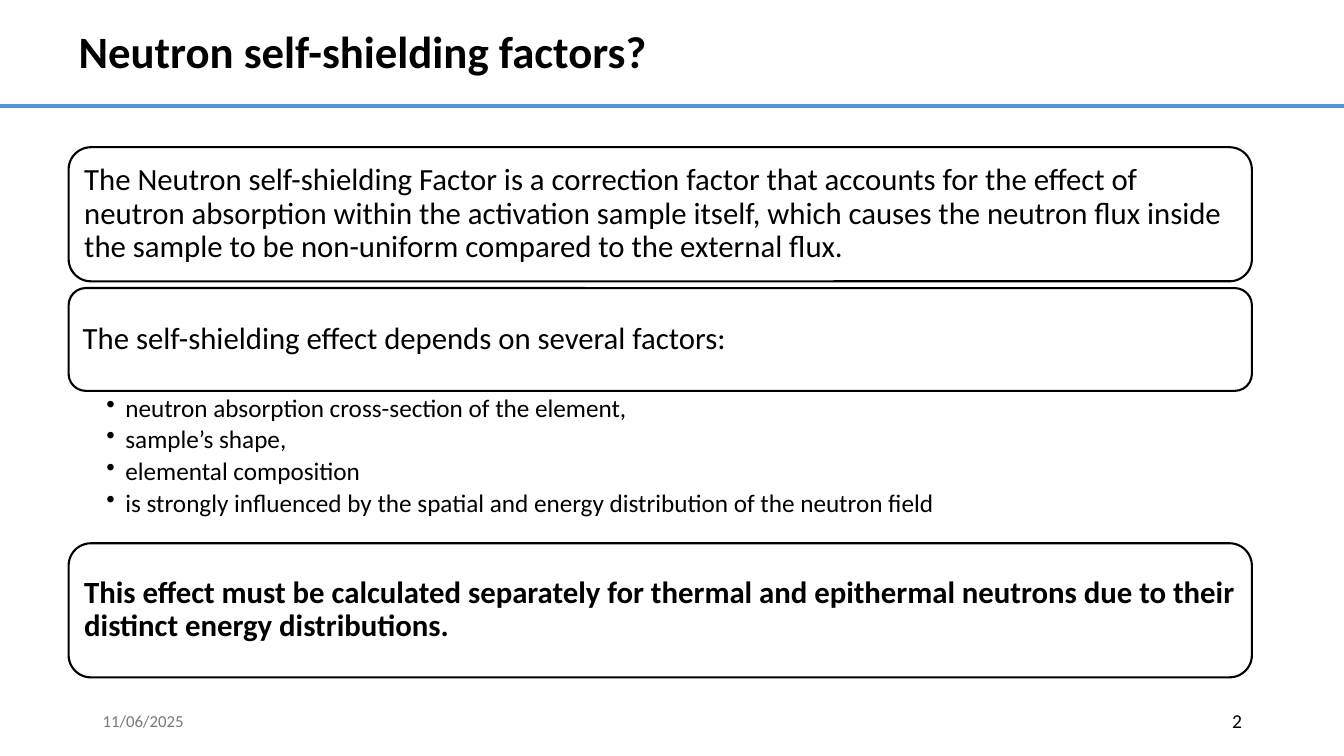
import dataclasses
import lxml.etree
import pptx
import pptx.dml.color
import pptx.enum.shapes
import pptx.enum.text
import pptx.oxml.ns
import pptx.util

Cm, Pt = pptx.util.Cm, pptx.util.Pt
Align, Anchor = pptx.enum.text.PP_ALIGN, pptx.enum.text.MSO_ANCHOR
qn = pptx.oxml.ns.qn


@dataclasses.dataclass(frozen=True)
class Theme:
    font: str = "Calibri"
    ink: str = "000000"
    paper: str = "FFFFFF"
    rule: str = "4E95D9"
    muted: str = "797979"
    title: int = 32
    body: int = 22
    item: int = 18
    page: int = 14
    date: int = 12


theme = Theme()


def rgb(code):
    return pptx.dml.color.RGBColor.from_string(code)


def write(shape, *lines, size, color=theme.ink, bold=False, align=Align.LEFT,
          anchor=Anchor.MIDDLE, inset=(0.25, 0.13, 0.25, 0.13),
          spacing=0.9, after=0, bullet=False):
    frame = shape.text_frame
    frame.word_wrap = True
    frame.vertical_anchor = anchor
    (frame.margin_left, frame.margin_top,
     frame.margin_right, frame.margin_bottom) = map(Cm, inset)
    for i, text in enumerate(lines):
        para = frame.add_paragraph() if i else frame.paragraphs[0]
        para.alignment = align
        para.line_spacing = spacing
        para.space_after = Pt(after)
        if bullet:
            props = para._p.get_or_add_pPr()
            props.set("marL", str(Cm(0.48)))
            props.set("indent", str(-Cm(0.48)))
            lxml.etree.SubElement(props, qn("a:buChar")).set("char", "•")
        run = para.add_run()
        run.text = text
        run.font.name = theme.font
        run.font.size = Pt(size)
        run.font.bold = bold
        run.font.color.rgb = rgb(color)


deck = pptx.Presentation()
deck.slide_width, deck.slide_height = Cm(33.87), Cm(19.05)
slide = deck.slides.add_slide(deck.slide_layouts[6])
shapes = slide.shapes
left, width = Cm(1.73), Cm(29.82)

# Title and rule
rule = shapes.add_connector(pptx.enum.shapes.MSO_CONNECTOR.STRAIGHT,
                            0, Cm(2.67), deck.slide_width, Cm(2.67))
rule.line.color.rgb = rgb(theme.rule)
rule.line.width = Pt(2.25)
lxml.etree.SubElement(rule._element.spPr, qn("a:effectLst"))
title = shapes.add_textbox(left, Cm(0.2), width, Cm(2.31))
write(title, "Neutron self-shielding factors?", size=theme.title, bold=True)

# Statement cards
cards = [
    (3.71, 3.38, False,
     "The Neutron self-shielding Factor is a correction factor that accounts "
     "for the effect of neutron absorption within the activation sample "
     "itself, which causes the neutron flux inside the sample to be "
     "non-uniform compared to the external flux."),
    (7.26, 2.59, False,
     "The self-shielding effect depends on several factors:"),
    (13.69, 3.38, True,
     "This effect must be calculated separately for thermal and epithermal "
     "neutrons due to their distinct energy distributions."),
]
for top, height, bold, text in cards:
    card = shapes.add_shape(pptx.enum.shapes.MSO_SHAPE.ROUNDED_RECTANGLE,
                            left, Cm(top), width, Cm(height))
    card.shadow.inherit = False
    card.fill.solid()
    card.fill.fore_color.rgb = rgb(theme.paper)
    card.line.color.rgb = rgb(theme.ink)
    card.line.width = Pt(1.5)
    write(card, text, size=theme.body, bold=bold, inset=(0.23,) * 4)

# Factors
items = shapes.add_textbox(left, Cm(9.88), width, Cm(3.45))
write(items,
      "neutron absorption cross-section of the element,",
      "sample’s shape,",
      "elemental composition",
      "is strongly influenced by the spatial and energy distribution "
      "of the neutron field",
      size=theme.item, anchor=Anchor.TOP, after=3.2, bullet=True,
      inset=(0.95, 0.08, 0.36, 0.08))

# Footer
date = shapes.add_textbox(Cm(2.34), Cm(17.65), Cm(7.62), Cm(1.02))
write(date, "11/06/2025", size=theme.date, color=theme.muted, spacing=1.0)
page = shapes.add_textbox(Cm(23.93), Cm(17.65), Cm(7.62), Cm(1.02))
write(page, "2", size=theme.page, align=Align.RIGHT, spacing=1.0)

deck.save("out.pptx")
